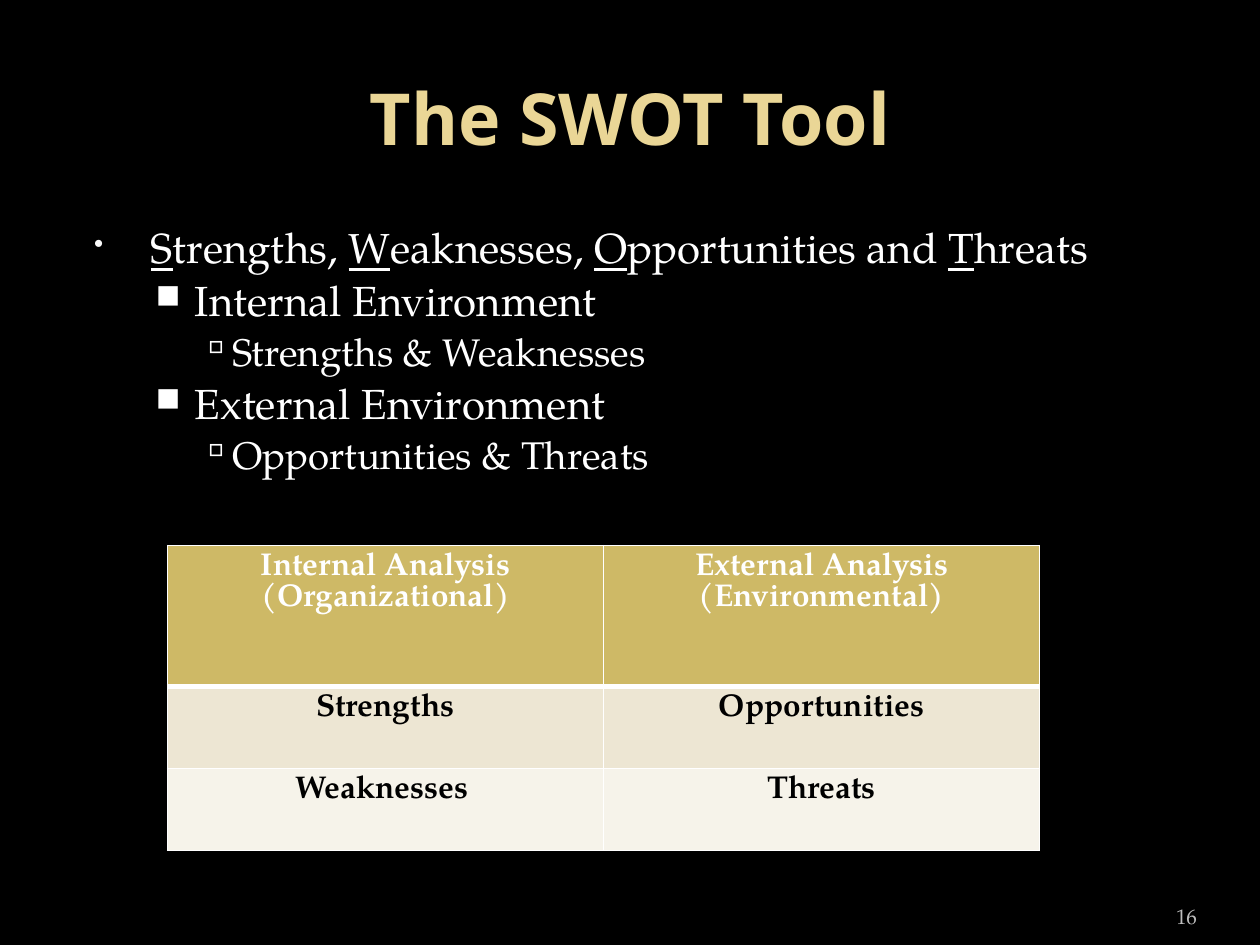
import pptx
import pptx.dml.color
import pptx.enum.text
import pptx.oxml
import pptx.oxml.ns
import pptx.util
from pptx.util import Cm, Pt

ALIGN = pptx.enum.text.PP_ALIGN
ANCHOR = pptx.enum.text.MSO_ANCHOR
WHITE = "FFFFFF"

# Per outline level: left margin and hanging indent (cm), text size,
# bullet, bullet colour, bullet size (percent)
LEVELS = [
    (1.52, 1.14, 24, "•", "F9F9F9", 65),
    (2.41, 0.79, 24, "■", WHITE, 80),
    (3.15, 0.64, 22, "▫", WHITE, 95),
]
# Underscores enclose underlined letters
OUTLINE = [
    (0, "_S_trengths, _W_eaknesses, _O_pportunities and _T_hreats"),
    (1, "Internal Environment"),
    (2, "Strengths & Weaknesses"),
    (1, "External Environment"),
    (2, "Opportunities & Threats"),
]
# Per table row: height (cm), fill, text colour, texts
SWOT_ROWS = [
    (2.84, "CEB966", WHITE,
     ["Internal Analysis (Organizational)", "External Analysis (Environmental)"]),
    (1.65, "EDE6D3", "000000", ["Strengths", "Opportunities"]),
    (1.65, "F6F3EA", "000000", ["Weaknesses ", "Threats"]),
]


def color(code):
    return pptx.dml.color.RGBColor.from_string(code)


def append_xml(parent, tag, content="", attributes=""):
    namespace = pptx.oxml.ns.nsdecls("a")
    parent.append(pptx.oxml.parse_xml(
        f"<a:{tag} {namespace} {attributes}>{content}</a:{tag}>"))


class SlideBuilder:
    """Holds the style and the current slide."""

    heading_font = "Noto Sans"
    body_font = "TeX Gyre Pagella"

    def __init__(self, page, background):
        self.page = page
        page.background.fill.solid()
        page.background.fill.fore_color.rgb = color(background)

    def style(self, span, size, code, bold=False, font=body_font):
        span.font.name = font
        span.font.size = Pt(size)
        span.font.bold = bold
        span.font.color.rgb = color(code)

    def frame(self, left, top, width, height, anchor):
        box = self.page.shapes.add_textbox(Cm(left), Cm(top), Cm(width), Cm(height))
        box.text_frame.word_wrap = True
        box.text_frame.vertical_anchor = anchor
        return box.text_frame

    def title(self, text, *place):
        frame = self.frame(*place, ANCHOR.MIDDLE)
        frame.text = text
        para = frame.paragraphs[0]
        para.alignment = ALIGN.CENTER
        self.style(para.runs[0], 41, "EAD696", True, self.heading_font)

    def page_number(self, text, *place):
        frame = self.frame(*place, ANCHOR.BOTTOM)
        frame.margin_left = frame.margin_right = 0
        frame.text = text
        para = frame.paragraphs[0]
        para.alignment = ALIGN.RIGHT
        self.style(para.runs[0], 12, "BDBDBD")

    def outline(self, items, *place):
        frame = self.frame(*place, ANCHOR.TOP)
        for number, (level, text) in enumerate(items):
            para = frame.add_paragraph() if number else frame.paragraphs[0]
            para.level = level
            para.line_spacing = 0.9
            self.bullet(para, level)
            for position, part in enumerate(text.split("_")):
                if part:
                    span = para.add_run()
                    span.text = part
                    self.style(span, LEVELS[level][2], WHITE)
                    span.font.underline = position % 2 == 1

    def bullet(self, para, level):
        """Set the indents, space before and bullet of an outline level."""
        margin, hanging, _, mark, code, percent = LEVELS[level]
        properties = para._p.get_or_add_pPr()
        properties.set("marL", str(Cm(margin)))
        properties.set("indent", str(-Cm(hanging)))
        append_xml(properties, "spcBef", '<a:spcPct val="20000"/>')
        append_xml(properties, "buClr", f'<a:srgbClr val="{code}"/>')
        append_xml(properties, "buSzPct", attributes=f'val="{percent * 1000}"')
        append_xml(properties, "buChar", attributes=f'char="{mark}"')

    def table(self, rows, left, top, width):
        height = sum(row[0] for row in rows)
        grid = self.page.shapes.add_table(
            len(rows), len(rows[0][3]), Cm(left), Cm(top), Cm(width), Cm(height)).table
        for index, (row_height, fill, code, texts) in enumerate(rows):
            grid.rows[index].height = Cm(row_height)
            for column, text in enumerate(texts):
                cell = grid.cell(index, column)
                # A thick rule parts the header from the rows below
                self.borders(cell, 3 if index == 1 else 1, 3 if index == 0 else 1)
                cell.fill.solid()
                cell.fill.fore_color.rgb = color(fill)
                cell.text_frame.text = text
                para = cell.text_frame.paragraphs[0]
                para.alignment = ALIGN.CENTER
                para.line_spacing = Pt(18)
                self.style(para.runs[0], 18, code, True)

    def borders(self, cell, top, bottom):
        properties = cell._tc.get_or_add_tcPr()
        line = f'<a:solidFill><a:srgbClr val="{WHITE}"/></a:solidFill>'
        for tag, points in (("lnL", 1), ("lnR", 1), ("lnT", top), ("lnB", bottom)):
            append_xml(properties, tag, line, f'w="{Pt(points)}"')


def main():
    deck = pptx.Presentation()
    deck.slide_width, deck.slide_height = Cm(25.4), Cm(19.05)
    slide = SlideBuilder(deck.slides.add_slide(deck.slide_layouts[6]), "000000")
    slide.title("The SWOT Tool", 1.27, 0.76, 22.86, 3.18)
    slide.outline(OUTLINE, 1.27, 4.45, 22.86, 13.08)
    slide.page_number("16", 22.02, 17.83, 2.11, 1.02)
    slide.table(SWOT_ROWS, 3.38, 11, 17.58)
    deck.save("out.pptx")


if __name__ == "__main__":
    main()
